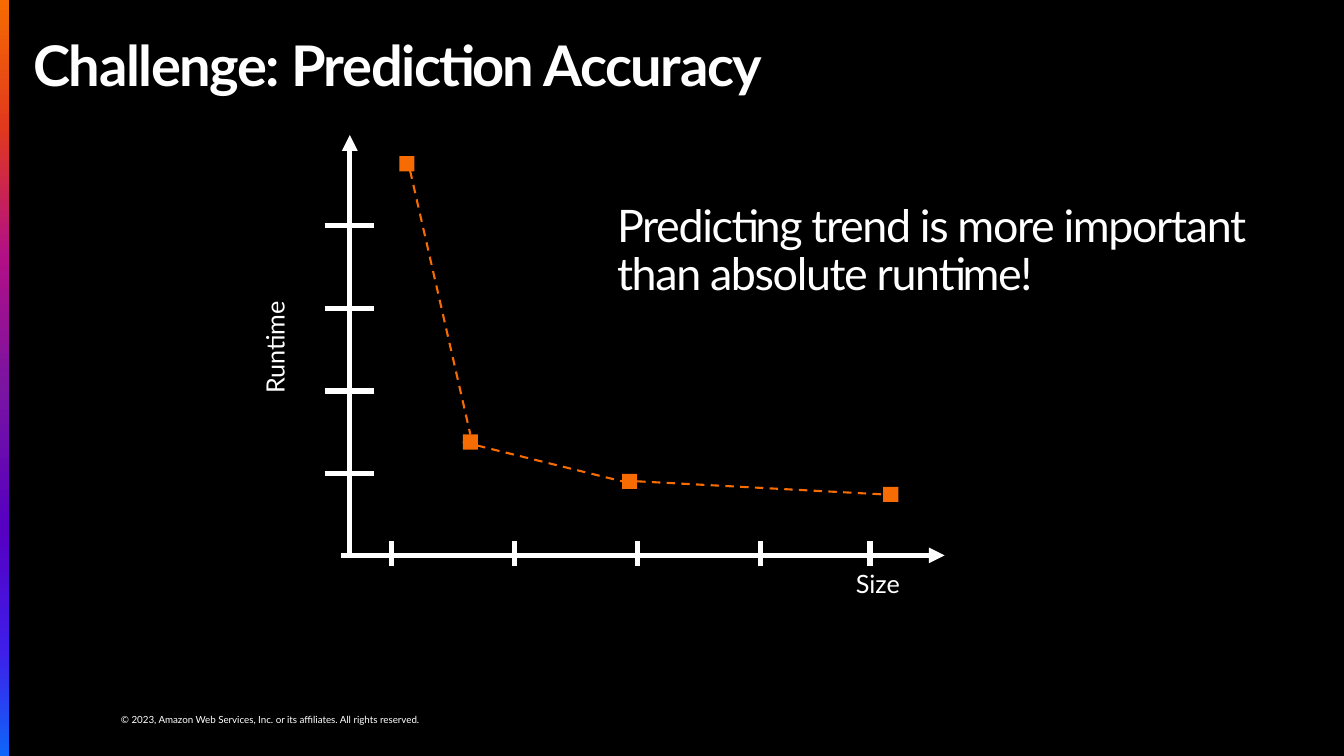
"""Builds the slide on prediction accuracy with a sketched runtime curve."""
from lxml.etree import SubElement
from pptx import Presentation
from pptx.dml.color import RGBColor
from pptx.enum.dml import MSO_LINE
from pptx.enum.shapes import MSO_CONNECTOR, MSO_SHAPE
from pptx.enum.text import MSO_ANCHOR, MSO_AUTO_SIZE, PP_ALIGN
from pptx.oxml.ns import qn
from pptx.util import Inches, Pt

BLACK = RGBColor(0x00, 0x00, 0x00)
WHITE = RGBColor(0xFF, 0xFF, 0xFF)
ORANGE = RGBColor(0xF6, 0x6C, 0x02)
BAR_STOPS = [
    (0, ORANGE),
    (17, RGBColor(0xE1, 0x38, 0x1E)),
    (34, RGBColor(0xB2, 0x0F, 0x87)),
    (51, RGBColor(0x7A, 0x14, 0xA1)),
    (70, RGBColor(0x56, 0x00, 0xC2)),
    (86, RGBColor(0x3F, 0x1E, 0xE9)),
    (100, RGBColor(0x0F, 0x65, 0xF9)),
]
FONT = "Lato"
MARKER_SIZE = 0.15
MARKERS = [(3.96, 1.55), (4.59, 4.31), (6.17, 4.7), (8.76, 4.83)]
TOP, LEFT, RIGHT = 0, 1, 3
TREND_SIDES = [(TOP, TOP), (LEFT, LEFT), (RIGHT, LEFT)]


def write_text(shape, text, size, insets, bold=False, tight=False):
    frame = shape.text_frame
    frame.word_wrap = True
    frame.auto_size = MSO_AUTO_SIZE.NONE
    frame.vertical_anchor = MSO_ANCHOR.TOP
    frame.margin_left = frame.margin_right = Inches(insets[0])
    frame.margin_top = frame.margin_bottom = Inches(insets[1])
    paragraph = frame.paragraphs[0]
    paragraph.alignment = PP_ALIGN.LEFT
    run = paragraph.add_run()
    run.text = text
    run.font.name = FONT
    run.font.size = Pt(size)
    run.font.bold = bold
    run.font.color.rgb = WHITE
    if tight:
        paragraph.line_spacing = 0.9
        run.font._element.set("spc", "-100")


def add_title(slide, text):
    title = slide.shapes.title
    title.left, title.top = Inches(0.33), Inches(0.33)
    title.width, title.height = Inches(12.67), Inches(0.7)
    write_text(title, text, 40, (0, 0.05), bold=True, tight=True)


def add_text(slide, box, text, size, insets=(0.1, 0.05), tight=False, rotation=0):
    shape = slide.shapes.add_textbox(*map(Inches, box))
    shape.rotation = rotation
    write_text(shape, text, size, insets, tight=tight)


def add_rectangle(slide, box, color):
    shape = slide.shapes.add_shape(MSO_SHAPE.RECTANGLE, *map(Inches, box))
    shape.shadow.inherit = False
    shape.fill.solid()
    shape.fill.fore_color.rgb = color
    shape.line.fill.background()
    return shape


def add_gradient_bar(slide):
    bar = add_rectangle(slide, (0, 0, 0.09, 7.5), ORANGE)
    bar.fill.gradient()
    bar.fill.gradient_angle = 270
    stops = bar._element.spPr.find(".//" + qn("a:gsLst"))
    for stop in list(stops):
        stops.remove(stop)
    for percent, color in BAR_STOPS:
        stop = SubElement(stops, qn("a:gs"), pos=str(percent * 1000))
        SubElement(stop, qn("a:srgbClr"), val=str(color))


def add_line(slide, start, end, color=WHITE, width=3.75, arrow=False):
    line = slide.shapes.add_connector(
        MSO_CONNECTOR.STRAIGHT, *map(Inches, (*start, *end)))
    line.line.color.rgb = color
    line.line.width = Pt(width)
    if arrow:
        SubElement(line.line._get_or_add_ln(), qn("a:tailEnd"), type="triangle")
    SubElement(line._element.spPr, qn("a:effectLst"))
    return line


def add_axes(slide):
    add_line(slide, (3.47, 5.54), (3.47, 1.34), arrow=True)
    add_line(slide, (3.38, 5.51), (9.37, 5.51), arrow=True)
    for index in range(4):
        y = 4.7 - 0.82 * index
        add_line(slide, (3.22, y), (3.71, y))
    for x in [3.88 + 1.22 * index for index in range(4)] + [8.63]:
        add_line(slide, (x, 5.37), (x, 5.62))
    add_text(slide, (8.39, 5.59, 1.92, 0.55), "Size", 18)
    add_text(slide, (2.03, 3.11, 1.39, 0.4), "Runtime", 18, rotation=270)


def add_trend(slide):
    markers = [add_rectangle(slide, (x, y, MARKER_SIZE, MARKER_SIZE), ORANGE)
               for x, y in MARKERS]
    for first, second, sides in zip(markers, markers[1:], TREND_SIDES):
        line = add_line(slide, (0, 0), (1, 1), ORANGE, 1.5)
        line.line.dash_style = MSO_LINE.DASH
        line.begin_connect(first, sides[0])
        line.end_connect(second, sides[1])


def main():
    presentation = Presentation()
    presentation.slide_width = Inches(13.33)
    presentation.slide_height = Inches(7.5)
    slide = presentation.slides.add_slide(presentation.slide_layouts[5])
    slide.background.fill.solid()
    slide.background.fill.fore_color.rgb = BLACK
    add_text(
        slide, (1.2, 7.08, 4.33, 0.12),
        "© 2023, Amazon Web Services, Inc. or its affiliates. All rights reserved.",
        7, insets=(0, 0))
    add_gradient_bar(slide)
    add_title(slide, "Challenge: Prediction Accuracy")
    add_text(
        slide, (6.12, 1.97, 6.44, 1.32),
        "Predicting trend is more important than absolute runtime!",
        32, insets=(0, 0.05), tight=True)
    add_axes(slide)
    add_trend(slide)
    presentation.save("out.pptx")


if __name__ == "__main__":
    main()
